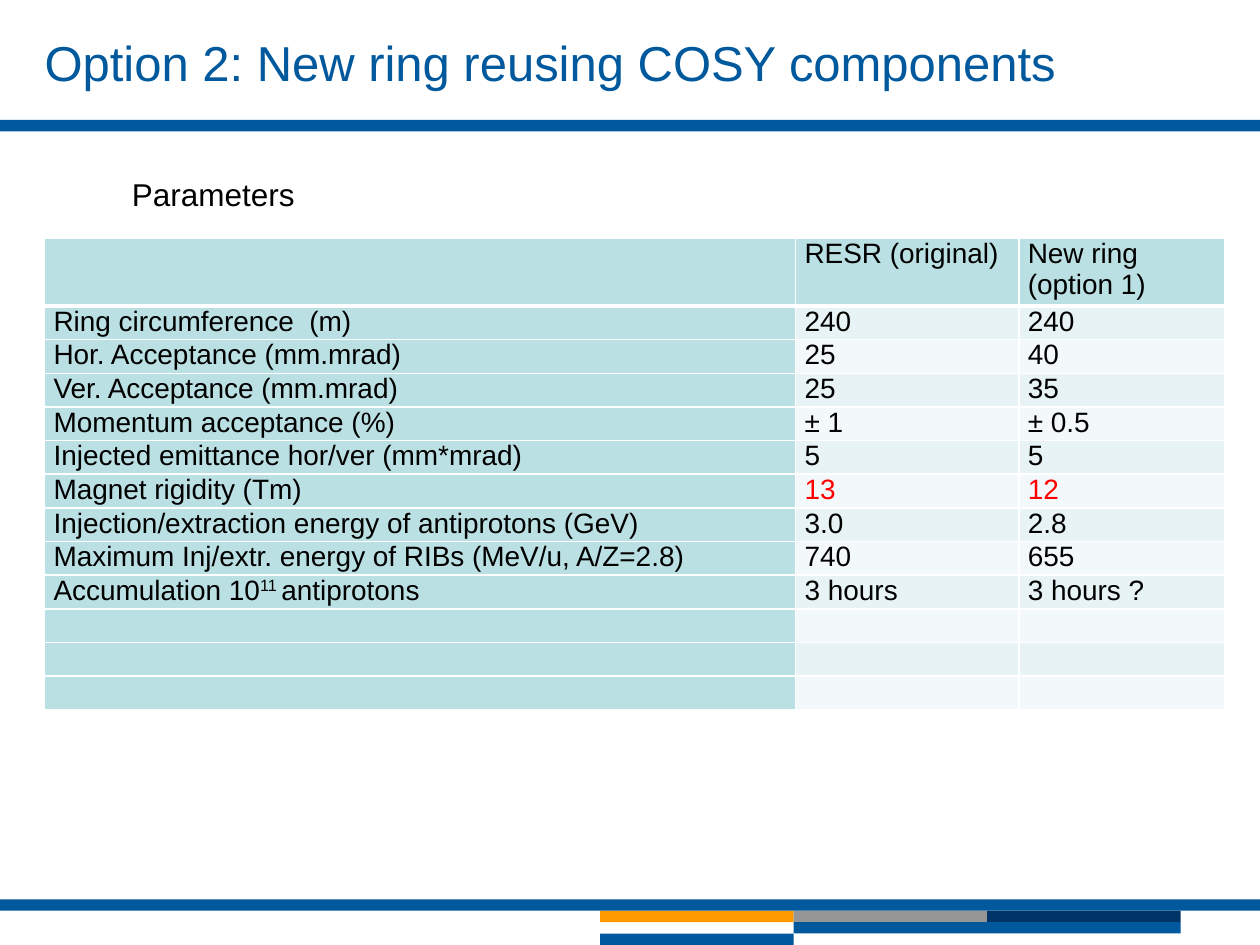
import pptx
import pptx.dml.color
import pptx.enum.shapes
import pptx.enum.text
import pptx.oxml
import pptx.oxml.ns
import pptx.util

Cm = pptx.util.Cm
Pt = pptx.util.Pt
RGB = pptx.dml.color.RGBColor
Align = pptx.enum.text.PP_ALIGN
Anchor = pptx.enum.text.MSO_ANCHOR

BLACK = RGB(0, 0, 0)
RED = RGB(0xFF, 0, 0)
BLUE = RGB(0x00, 0x59, 0x9D)
NAVY = RGB(0x00, 0x33, 0x66)
GREY = RGB(0x96, 0x96, 0x96)
ORANGE = RGB(0xFF, 0x99, 0x00)
TEAL = RGB(0xBB, 0xE0, 0xE3)
BANDS = (RGB(0xE7, 0xF3, 0xF4), RGB(0xF3, 0xF9, 0xFA))

HEAD = ("", "RESR (original)", "New ring  (option 1)")
ROWS = [
    ("Ring circumference  (m)", "240", "240"),
    ("Hor. Acceptance (mm.mrad)", "25", "40"),
    ("Ver. Acceptance (mm.mrad)", "25", "35"),
    ("Momentum acceptance (%)", "± 1", "± 0.5"),
    ("Injected emittance hor/ver (mm*mrad)", "5", "5"),
    ("Magnet rigidity (Tm)", "13", "12"),
    ("Injection/extraction energy of antiprotons (GeV)", "3.0", "2.8"),
    ("Maximum Inj/extr. energy of RIBs (MeV/u, A/Z=2.8)", "740", "655"),
    ("Accumulation 10^11 ^antiprotons", "3 hours", "3 hours ?"),
] + [("", "", "")] * 3
RED_ROW = 6
LEFT_ALIGNED = "New ring  (option 1)", *ROWS[4]


class Deck:
    def __init__(self, wide, high, font):
        self.prs = pptx.Presentation()
        self.prs.slide_width, self.prs.slide_height = wide, high
        self.slide = self.prs.slides.add_slide(self.prs.slide_layouts[5])
        self.shapes = self.slide.shapes
        self.font = font

    def style(self, para, size, color, align=Align.LEFT):
        para.alignment = align
        font = para.font
        font.name, font.size, font.bold = self.font, Pt(size), False
        font.color.rgb = color

    def title(self, text, x, y, w, h):
        box = self.shapes.title
        box.left, box.top, box.width, box.height = Cm(x), Cm(y), Cm(w), Cm(h)
        frame = box.text_frame
        frame.text = text
        frame.margin_left = frame.margin_right = 0
        frame.margin_top = frame.margin_bottom = 0
        frame.vertical_anchor = Anchor.MIDDLE
        self.style(frame.paragraphs[0], 28, BLUE)

    def label(self, text, x, y, w, h):
        box = self.shapes.add_textbox(Cm(x), Cm(y), Cm(w), Cm(h))
        box.text_frame.word_wrap = False
        box.text_frame.text = text
        self.style(box.text_frame.paragraphs[0], 18, BLACK)

    def bar(self, x, y, w, h, color):
        kind = pptx.enum.shapes.MSO_SHAPE.RECTANGLE
        bar = self.shapes.add_shape(kind, Cm(x), Cm(y), Cm(w), Cm(h))
        bar.shadow.inherit = False
        bar.fill.solid()
        bar.fill.fore_color.rgb = color
        bar.line.fill.background()

    def cell(self, cell, text, fill, color, base=1):
        props = cell._tc.get_or_add_tcPr()
        for side in "LRTB":
            width = Pt(base if side == "B" else 1)
            props.append(pptx.oxml.parse_xml(
                f'<a:ln{side} {pptx.oxml.ns.nsdecls("a")} w="{width}"><a:solidFill>'
                f'<a:srgbClr val="FFFFFF"/></a:solidFill></a:ln{side}>'))
        cell.fill.solid()
        cell.fill.fore_color.rgb = fill
        cell.margin_left = cell.margin_right = Cm(0.18)
        cell.margin_top = cell.margin_bottom = 0
        para = cell.text_frame.paragraphs[0]
        align = Align.LEFT if text in LEFT_ALIGNED else Align.JUSTIFY
        self.style(para, 16, color, align)
        # Text between carets is superscript
        for i, part in enumerate(text.split("^")):
            if part:
                run = para.add_run()
                run.text = part
                if i % 2:
                    run._r.get_or_add_rPr().set("baseline", "30000")
        if not text:
            para._p.get_or_add_endParaRPr().set("sz", "1600")

    def table(self, x, y, cols, top, step):
        count = len(ROWS) + 1
        table = self.shapes.add_table(
            count, len(cols), Cm(x), Cm(y), Cm(sum(cols)),
            Cm(top + step * len(ROWS))).table
        table.first_row = table.horz_banding = False
        for col, width in zip(table.columns, cols):
            col.width = Cm(width)
        for r, texts in enumerate([HEAD] + ROWS):
            table.rows[r].height = Cm(step if r else top)
            for c, text in enumerate(texts):
                fill = BANDS[(r - 1) % 2] if r and c else TEAL
                color = RED if r == RED_ROW and c else BLACK
                self.cell(table.cell(r, c), text, fill, color, 1 if r else 3)


def main():
    deck = Deck(Cm(25.4), Cm(19.05), "Arial")

    # Coloured blocks of the footer, on a grid
    left, top, unit, thick = 12.1, 18.36, 3.9, 0.23
    for col, row, span, color in (
            (0, 0, 1, ORANGE), (1, 0, 1, GREY), (2, 0, 1, NAVY),
            (1, 1, 2, BLUE), (0, 2, 1, BLUE)):
        deck.bar(left + col * unit, top + row * thick, span * unit, thick, color)

    # Rules across the slide
    for y in (2.42, top - thick):
        deck.bar(0, y, 25.4, thick, BLUE)

    # Heading and parameters
    deck.title("Option 2: New ring reusing COSY components", 0.9, 0.55, 23.9, 1.38)
    deck.label("Parameters", 2.41, 3.4, 4.01, 1.02)
    deck.table(0.9, 4.8, (15.14, 4.5, 4.14), 1.37, 0.63)

    deck.prs.save("out.pptx")


if __name__ == "__main__":
    main()
